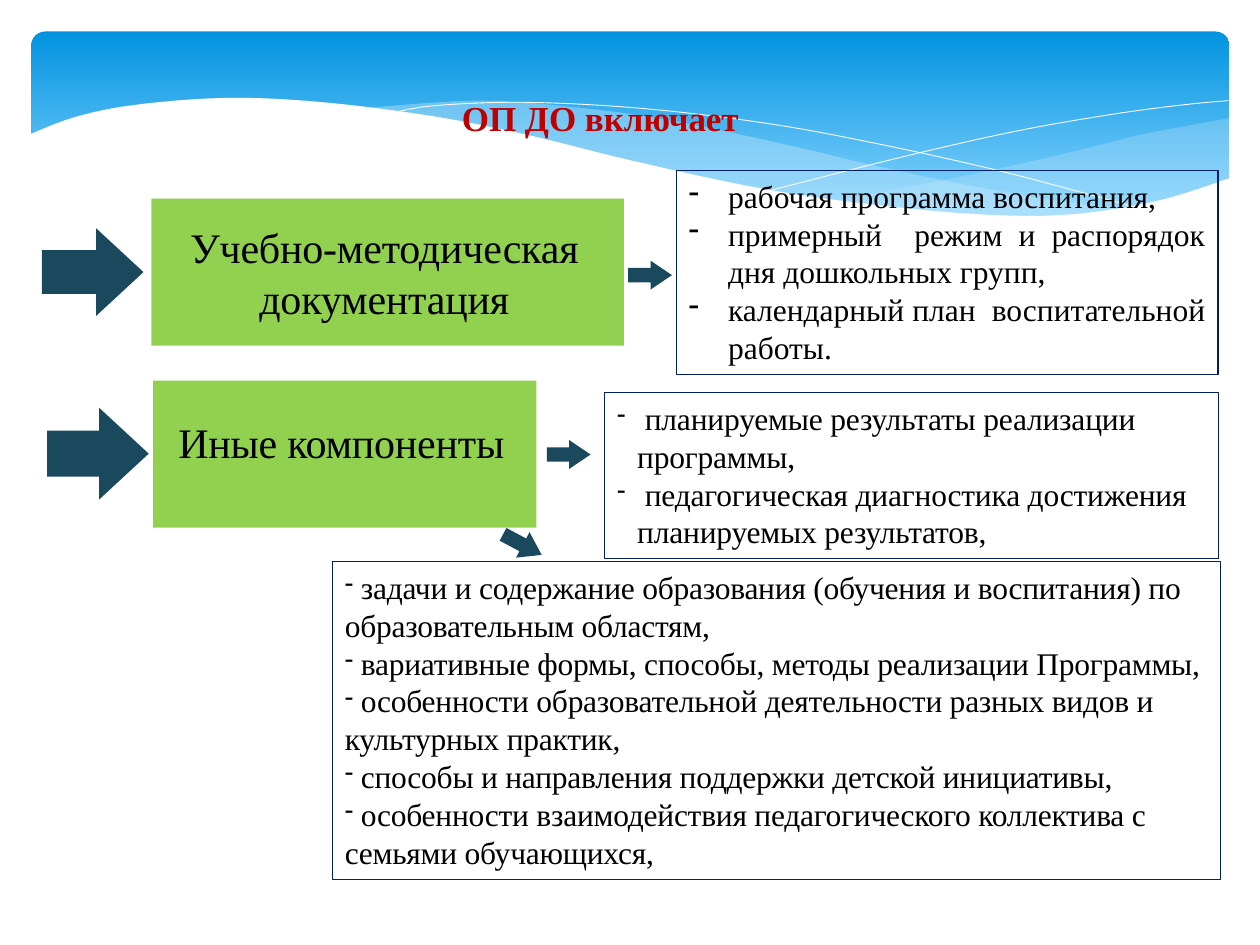
"""Builds a slide on the parts of a preschool education programme."""
from itertools import pairwise

from lxml.etree import SubElement
from pptx import Presentation
from pptx.dml.color import RGBColor
from pptx.enum.shapes import MSO_SHAPE
from pptx.enum.text import MSO_ANCHOR, PP_ALIGN
from pptx.oxml.ns import qn
from pptx.util import Pt

BLACK, WHITE, NAVY = "000000", "FFFFFF", "002060"
GREEN, TEAL, RED, PALE = "92D050", "1A495D", "C00000", "C6E7FC"


def tone(code):
    return RGBColor.from_string(code)


def curve(*knots, steps=6):
    ends = [knots[0], *knots, knots[-1]]
    path = [knots[0]]
    for i, (b, c) in enumerate(pairwise(knots)):
        a, d = ends[i], ends[i + 3]
        for n in range(1, steps + 1):
            t = n / steps
            path.append(tuple(
                q + t / 2 * (r - p + t * (2 * p - 5 * q + 4 * r - s + t * (3 * (q - r) + s - p)))
                for p, q, r, s in zip(a, b, c, d)))
    return path


class Deck:
    def __init__(self, wide, high, face):
        self.show = Presentation()
        self.show.slide_width, self.show.slide_height = Pt(wide), Pt(high)
        self.page = self.show.slides.add_slide(self.show.slide_layouts[5])
        self.items = self.page.shapes
        self.face = face

    def paint(self, item, fill=None, line=None, width=0.75, alpha=None):
        item.shadow.inherit = False
        if fill:
            item.fill.solid()
            item.fill.fore_color.rgb = tone(fill)
        else:
            item.fill.background()
        if alpha:
            hue = item.fill._xPr.find(".//" + qn("a:srgbClr"))
            SubElement(hue, qn("a:alpha"), val=str(alpha * 1000))
        if line:
            item.line.color.rgb = tone(line)
            item.line.width = Pt(width)
        else:
            item.line.fill.background()

    def shape(self, kind, place, **look):
        item = self.items.add_shape(kind, *map(Pt, place))
        self.paint(item, **look)
        return item

    def band(self, place, top, base):
        item = self.shape(MSO_SHAPE.ROUNDED_RECTANGLE, place)
        item.adjustments[0] = 0.07
        item.fill.gradient()
        item.fill.gradient_angle = 270
        for stop, code, spot in zip(item.fill.gradient_stops, (top, base), (0, 0.9)):
            stop.color.rgb, stop.position = tone(code), spot

    def wave(self, path, close=True, **look):
        dots = [(Pt(x), Pt(y)) for x, y in path]
        pen = self.items.build_freeform(*dots[0])
        pen.add_line_segments(dots[1:], close=close)
        self.paint(pen.convert_to_shape(), **look)

    def style(self, para, size, code, align, bold=False, space=0):
        para.alignment = align
        font = para.font
        font.name, font.size, font.bold = self.face, Pt(size), bold
        font.color.rgb = tone(code)
        font._rPr.set("spc", str(space))

    def title(self, text, place):
        item = self.items.title
        self.items._spTree.append(item._element)
        item.left, item.top, item.width, item.height = map(Pt, place)
        frame = item.text_frame
        frame.text = text
        frame.vertical_anchor = MSO_ANCHOR.TOP
        frame.margin_left = frame.margin_right = frame.margin_bottom = 0
        frame.margin_top = Pt(1)
        para = frame.paragraphs[0]
        para.space_before = Pt(1)
        self.style(para, 20, RED, PP_ALIGN.CENTER, True, -5)

    def block(self, text, place, foot=0):
        item = self.shape(MSO_SHAPE.RECTANGLE, place, fill=GREEN)
        frame = item.text_frame
        frame.text = text
        frame.word_wrap = True
        frame.vertical_anchor = MSO_ANCHOR.MIDDLE
        frame.margin_top, frame.margin_bottom = 0, Pt(foot)
        frame.margin_right = Pt(11)
        self.style(frame.paragraphs[0], 24, BLACK, PP_ALIGN.CENTER, space=-10)

    def arrow(self, place, head=0.54, turn=0):
        item = self.shape(MSO_SHAPE.RIGHT_ARROW, place, fill=TEAL)
        item.adjustments[1] = head
        item.rotation = turn

    def points(self, lines, place, hang=0, mark=80, align=PP_ALIGN.LEFT, space=0):
        item = self.shape(MSO_SHAPE.RECTANGLE, place, line=NAVY)
        frame = item.text_frame
        frame.text = "\n".join(lines)
        frame.word_wrap = True
        frame.vertical_anchor = MSO_ANCHOR.TOP
        for para in frame.paragraphs:
            self.style(para, 18, BLACK, align, space=space)
            props = para._p.get_or_add_pPr()
            props.set("marL", str(Pt(hang)))
            props.set("indent", str(-Pt(hang)))
            size = SubElement(props, qn("a:buSzPct"), val=str(mark * 1000))
            sign = SubElement(props, qn("a:buChar"), char="-")
            props.find(qn("a:defRPr")).addprevious(size)
            size.addnext(sign)


def main():
    deck = Deck(720, 540, "Times New Roman")
    deck.band((18, 18, 684.5, 112), "0293E0", "83D3FE")
    deck.wave(
        curve((702.5, 67.5), (652, 77), (620, 85), (561, 98.5), (476, 115))
        + curve((476, 115), (527.5, 120.5), (579, 124), (629, 121.5), (668, 114), (702.5, 102)),
        fill=PALE, alpha=29)
    deck.wave(
        curve((643, 120), (581, 111), (508, 96.5), (453, 83.5), (389.5, 70), (335, 62),
              (273.5, 57.5), (206, 62))
        + curve((206, 62), (260.5, 70), (323, 83.5), (407.5, 103), (479, 116),
                (538.5, 122.5), (589, 124.5), (643, 120)),
        fill=PALE, alpha=40)
    for path in (
        curve((222.5, 65), (247.5, 60.5), (299.5, 58.5), (367, 62), (438, 70.5),
              (500.5, 82), (572.5, 98), (653, 119.5)),
        curve((441.5, 108.5), (518.5, 89), (580.5, 75), (634.5, 65.5), (675.5, 60), (702, 57.5)),
    ):
        deck.wave(path, close=False, line=WHITE, width=0.5)
    deck.wave(
        curve((703.5, 101.5), (662.5, 114.5), (612, 122.5), (560, 122.5), (495.5, 116.5),
              (434, 107.5), (362, 92), (301, 77), (245, 66), (180, 58), (127.5, 56),
              (76.5, 60), (42.5, 67), (16.5, 77))
        + [(16.5, 161), (703.5, 161)],
        fill=WHITE)

    deck.title("ОП ДО включает", (124.5, 54, 437, 25))
    deck.block("Учебно-методическая документация", (86.5, 113.5, 270, 84))
    deck.block("Иные компоненты", (87.5, 217.5, 219, 84), foot=14)
    deck.arrow((24, 130.5, 58, 50))
    deck.arrow((27, 233, 58, 52.5))
    deck.arrow((359, 149, 25, 16.5), head=0.74)
    deck.arrow((312.5, 251.5, 25, 16.5), head=0.74)
    deck.points(
        ["рабочая программа воспитания,",
         "примерный  режим и распорядок дня дошкольных групп,",
         "календарный план  воспитательной работы."],
        (386.5, 97.5, 309.5, 116.5), hang=22.5, mark=100, align=PP_ALIGN.JUSTIFY)
    deck.points(
        [" планируемые результаты реализации программы,",
         " педагогическая диагностика достижения планируемых результатов,"],
        (345.5, 224.5, 351, 94.5), hang=11.5, space=-10)
    deck.points(
        [" задачи и содержание образования (обучения и воспитания) по образовательным областям,",
         " вариативные формы, способы, методы реализации Программы,",
         " особенности образовательной деятельности разных видов и культурных практик,",
         " способы и направления поддержки детской инициативы,",
         " особенности взаимодействия педагогического коллектива с семьями обучающихся,"],
        (190, 321, 507.5, 181.5), space=-15)
    deck.arrow((286, 303, 25, 16.5), head=0.74, turn=28)
    deck.show.save("out.pptx")


if __name__ == "__main__":
    main()
